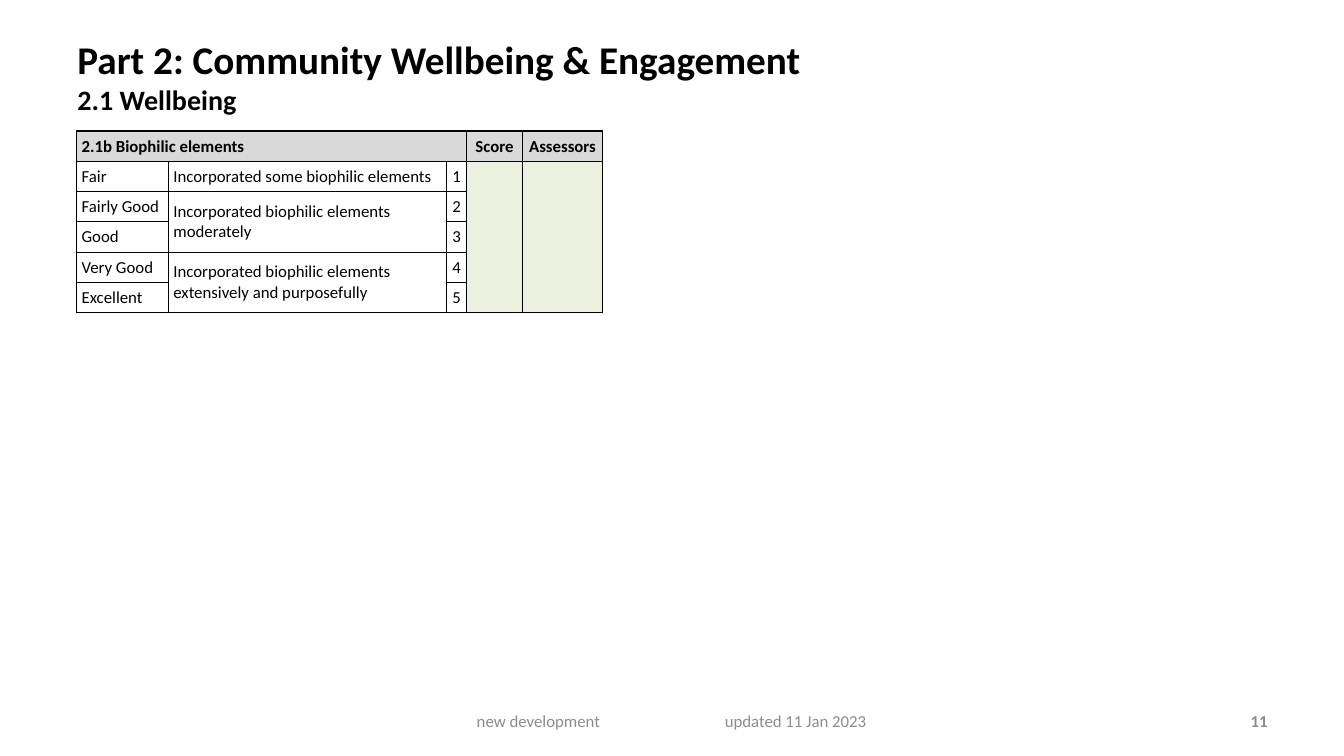
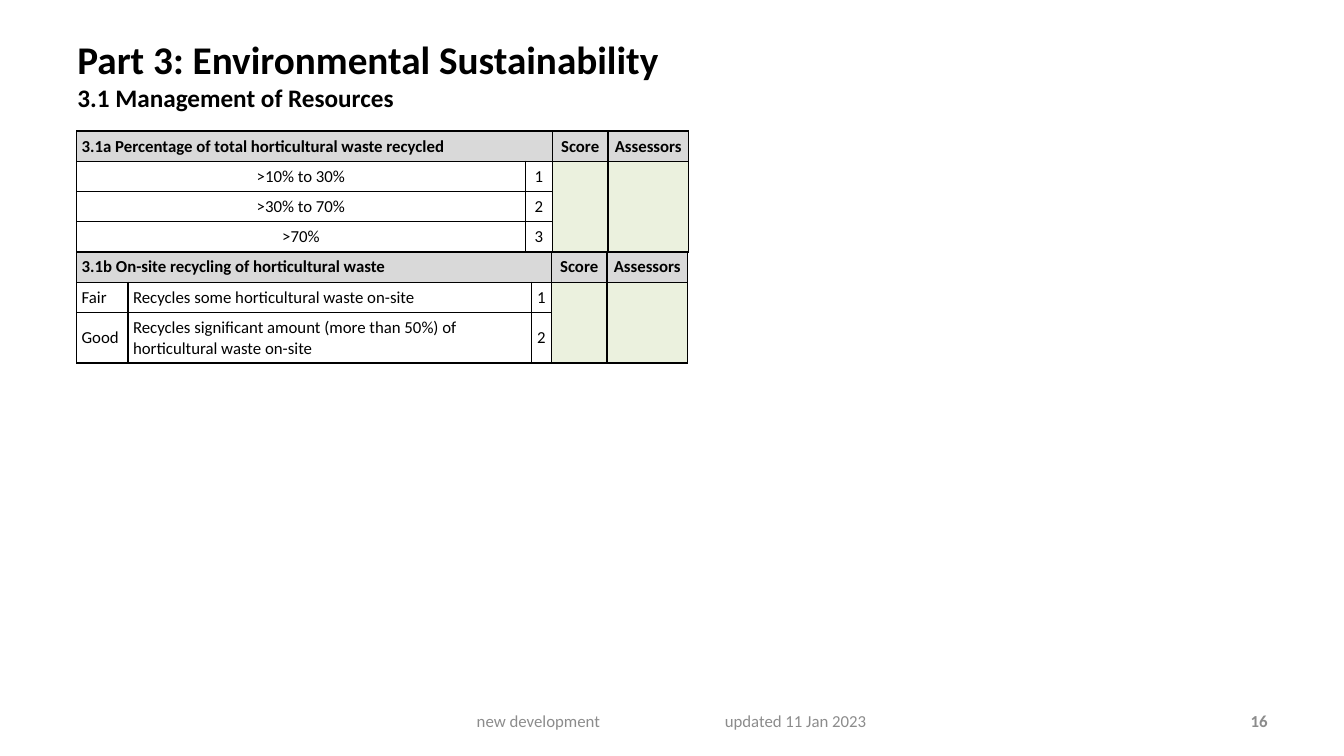
from lxml import etree
from pptx import Presentation
from pptx import util as u
from pptx.dml import color
from pptx.enum import text
from pptx.oxml import ns

FONT = "Calibri"
BLACK, GREY, HEADER, SCORE, WHITE = "000000", "8C8C8C", "D9D9D9", "EBF1DE", "FFFFFF"
LEFT, CENTER, RIGHT = text.PP_ALIGN.LEFT, text.PP_ALIGN.CENTER, text.PP_ALIGN.RIGHT
ROW_HEIGHT = 0.3
TABLE_LEFT = 0.76
SCORE_WIDTHS = [0.55, 0.8]

PAGES = [
    {
        "number": "11",
        "title": "Part 2: Community Wellbeing & Engagement",
        "subtitle": "2.1 Wellbeing",
        "subtitle_size": 20,
        "tables": [
            {
                "top": 1.3,
                "heading": "2.1b Biophilic elements",
                "widths": [0.91, 2.76, 0.2],
                "aligns": [LEFT, LEFT, CENTER],
                "rows": [
                    ["Fair", "Incorporated some biophilic elements", "1"],
                    ["Fairly Good", "Incorporated biophilic elements moderately", "2"],
                    ["Good", None, "3"],
                    ["Very Good", "Incorporated biophilic elements extensively and purposefully", "4"],
                    ["Excellent", None, "5"],
                ],
            },
        ],
    },
    {
        "number": "16",
        "title": "Part 3: Environmental Sustainability",
        "subtitle": "3.1 Management of Resources",
        "subtitle_size": 18,
        "tables": [
            {
                "top": 1.3,
                "heading": "3.1a Percentage of total horticultural waste recycled",
                "widths": [4.45, 0.27],
                "aligns": [CENTER, CENTER],
                "rows": [[">10% to 30%", "1"], [">30% to 70%", "2"], [">70%", "3"]],
            },
            {
                "top": 2.5,
                "heading": "3.1b On-site recycling of horticultural waste",
                "widths": [0.51, 4, 0.2],
                "aligns": [LEFT, LEFT, CENTER],
                "rows": [
                    ["Fair", "Recycles some horticultural waste on-site", "1"],
                    ["Good", "Recycles significant amount (more than 50%) of horticultural waste on-site", "2"],
                ],
            },
        ],
    },
]


def write(para, words, size=12, ink=BLACK, bold=False, align=LEFT):
    para.alignment = align
    if not words:
        para._p.get_or_add_endParaRPr().set("sz", str(size * 100))
        return
    span = para.add_run()
    span.text = words
    span.font.name = FONT
    span.font.size = u.Pt(size)
    span.font.bold = bold
    span.font.color.rgb = color.RGBColor.from_string(ink)


def style_cell(cell, fill):
    cell.vertical_anchor = text.MSO_ANCHOR.MIDDLE
    cell.margin_left = cell.margin_right = u.Inches(0.05)
    cell.margin_top = cell.margin_bottom = u.Inches(0.05)
    properties = cell._tc.get_or_add_tcPr()
    for side in ("a:lnL", "a:lnR", "a:lnT", "a:lnB"):
        line = etree.SubElement(properties, ns.qn(side), w=str(u.Pt(1)))
        solid = etree.SubElement(line, ns.qn("a:solidFill"))
        etree.SubElement(solid, ns.qn("a:srgbClr"), val=BLACK)
    cell.fill.solid()
    cell.fill.fore_color.rgb = color.RGBColor.from_string(fill)


deck = Presentation()
deck.slide_width, deck.slide_height = u.Inches(13.33), u.Inches(7.5)

for content in PAGES:
    page = deck.slides.add_slide(deck.slide_layouts[6])

    frames = []
    for left, top, width, height, anchor in (
        (0.67, 0.3, 10.36, 0.99, text.MSO_ANCHOR.TOP),
        (4.63, 6.95, 4.22, 0.4, text.MSO_ANCHOR.MIDDLE),
        (9.56, 6.95, 3.11, 0.4, text.MSO_ANCHOR.MIDDLE),
    ):
        box = page.shapes.add_textbox(u.Inches(left), u.Inches(top), u.Inches(width), u.Inches(height))
        box.text_frame.word_wrap = True
        box.text_frame.vertical_anchor = anchor
        frames.append(box.text_frame)
    title, footer, number = frames

    write(title.paragraphs[0], content["title"], size=28, bold=True)
    write(title.add_paragraph(), content["subtitle"], size=content["subtitle_size"], bold=True)
    write(number.paragraphs[0], content["number"], ink=GREY, bold=True, align=RIGHT)

    para = footer.paragraphs[0]
    tabs = etree.SubElement(para._p.get_or_add_pPr(), ns.qn("a:tabLst"))
    etree.SubElement(tabs, ns.qn("a:tab"), pos=str(u.Inches(2.46)), algn="l")
    write(para, "new development\tupdated 11 Jan 2023", ink=GREY)

    for block in content["tables"]:
        widths = block["widths"] + SCORE_WIDTHS
        aligns = block["aligns"] + [CENTER, CENTER]
        criteria = len(block["widths"])
        heading = [block["heading"]] + [""] * (criteria - 1) + ["Score", "Assessors"]
        rows = [heading] + [row + ["", ""] for row in block["rows"]]
        last = len(rows) - 1
        table = page.shapes.add_table(
            len(rows), len(widths), u.Inches(TABLE_LEFT), u.Inches(block["top"]),
            u.Inches(sum(widths)), u.Inches(ROW_HEIGHT * len(rows)),
        ).table
        table.first_row = table.horz_banding = False
        for column, width in zip(table.columns, widths):
            column.width = u.Inches(width)

        for r, row in enumerate(rows):
            table.rows[r].height = u.Inches(ROW_HEIGHT)
            for c, words in enumerate(row):
                cell = table.cell(r, c)
                style_cell(cell, HEADER if r == 0 else SCORE if c >= criteria else WHITE)
                align = LEFT if r == 0 and c == 0 else aligns[c]
                write(cell.text_frame.paragraphs[0], words, bold=r == 0, align=align)
                if words is None:
                    table.cell(r - 1, c).merge(cell)

        table.cell(0, 0).merge(table.cell(0, criteria - 1))
        for c in (criteria, criteria + 1):
            table.cell(1, c).merge(table.cell(last, c))

deck.save("out.pptx")
